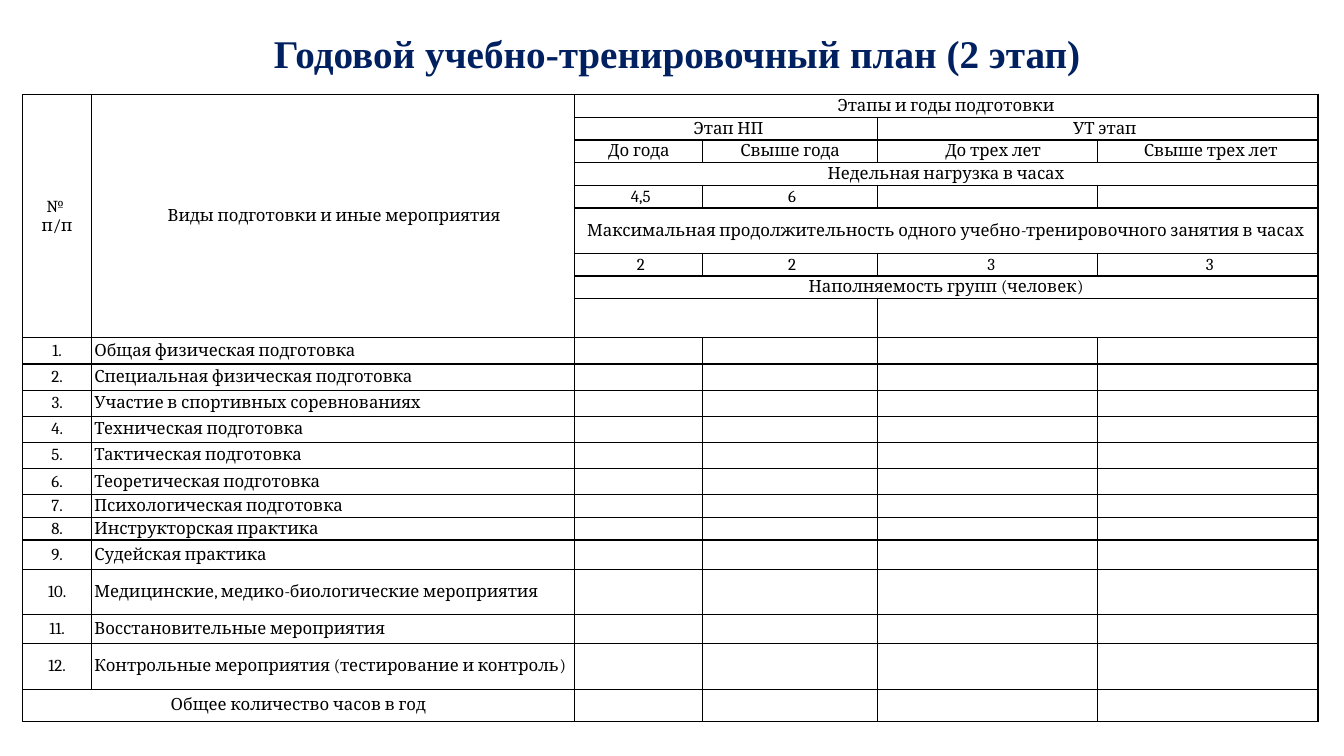
from dataclasses import dataclass

from lxml import etree
from pptx import Presentation
from pptx import util as u
from pptx.dml import color
from pptx.enum import text
from pptx.oxml import ns


@dataclass(frozen=True)
class Theme:
    ink: str = "000000"
    heading: str = "002060"
    body_font: str = "Cambria"
    heading_font: str = "Times New Roman"
    body_size: float = 12
    heading_size: float = 28
    border: float = 1


@dataclass(frozen=True)
class Entry:
    """Text of one table cell, with the cells it spans and its indents in points."""
    row: int
    col: int
    words: str = ""
    rows: int = 1
    cols: int = 1
    margin: float = 0
    indent: float = 0
    centred: bool = True


THEME = Theme()

COLUMN_WIDTHS = [49.2, 344.8, 91.8, 125, 157.2, 157.4]
LINE = 16.2
ROW_HEIGHTS = ([LINE] * 5 + [2 * LINE, LINE, LINE, 28] + [18.7] * 6
               + [LINE, LINE, 21, 2 * LINE, 20.8, 2 * LINE, 23])

HEADER = [
    Entry(0, 0, "№ \nп/п", rows=9),
    Entry(0, 1, "Виды подготовки и иные мероприятия", rows=9, margin=2),
    Entry(0, 2, "Этапы и годы подготовки", cols=4),
    Entry(1, 2, "Этап НП", cols=2, margin=7.2, indent=-3.6),
    Entry(1, 4, "УТ этап", cols=2, margin=10),
    Entry(2, 2, "До года", indent=0.7),
    Entry(2, 3, "Свыше года"),
    Entry(2, 4, "До трех лет", margin=15, indent=-7.2),
    Entry(2, 5, "Свыше трех лет", margin=4.3),
    Entry(3, 2, "Недельная нагрузка в часах", cols=4),
    Entry(4, 2, " 4,5", indent=0.7),
    Entry(4, 3, " 6"),
    Entry(5, 2, "Максимальная продолжительность одного "
                "учебно-тренировочного занятия в часах", cols=4),
    Entry(6, 2, " 2", indent=0.7),
    Entry(6, 3, " 2"),
    Entry(6, 4, "3 ", margin=15, indent=-7.2),
    Entry(6, 5, " 3"),
    Entry(7, 2, "Наполняемость групп (человек)", cols=4),
    Entry(8, 2, cols=2),
    Entry(8, 4, cols=2),
]

ACTIVITIES = [
    "Общая физическая подготовка",
    "Специальная физическая подготовка",
    "Участие в спортивных соревнованиях",
    "Техническая подготовка",
    "Тактическая подготовка",
    "Теоретическая подготовка",
    "Психологическая подготовка",
    "Инструкторская практика",
    "Судейская практика",
    "Медицинские, медико-биологические мероприятия",
    "Восстановительные мероприятия",
    "Контрольные мероприятия (тестирование и контроль)",
]
FIRST_ACTIVITY = 9


def plan_entries() -> list[Entry]:
    entries = list(HEADER)
    for number, activity in enumerate(ACTIVITIES, 1):
        row = FIRST_ACTIVITY + number - 1
        entries.append(Entry(row, 0, f"{number}.", margin=2, indent=-2))
        entries.append(Entry(row, 1, activity, margin=2, centred=False))
    total_row = FIRST_ACTIVITY + len(ACTIVITIES)
    entries.append(Entry(total_row, 0, "Общее количество часов в год",
                         cols=2, margin=2, indent=-2))
    return entries


def set_indent(paragraph, margin: float, indent: float) -> None:
    properties = paragraph._p.get_or_add_pPr()
    properties.set("marL", str(int(u.Pt(margin))))
    properties.set("indent", str(int(u.Pt(indent))))


def add_run(paragraph, words: str, font: str, size: float, ink: str,
            bold: bool = False) -> None:
    run = paragraph.add_run()
    run.text = words
    run.font.name = font
    run.font.size = u.Pt(size)
    run.font.bold = bold
    run.font.color.rgb = color.RGBColor.from_string(ink)


def prepare_cell(cell) -> None:
    cell.margin_left = cell.margin_right = u.Pt(0)
    cell.margin_top = cell.margin_bottom = u.Pt(0)
    cell.vertical_anchor = text.MSO_ANCHOR.MIDDLE
    # Borders on all four sides
    properties = cell._tc.get_or_add_tcPr()
    for side in ("lnL", "lnR", "lnT", "lnB"):
        line = etree.SubElement(properties, ns.qn(f"a:{side}"),
                                w=str(int(u.Pt(THEME.border))))
        fill = etree.SubElement(line, ns.qn("a:solidFill"))
        etree.SubElement(fill, ns.qn("a:srgbClr"), val=THEME.ink)
    cell.fill.background()
    # Type size of the empty line, so that blank rows stay low
    paragraph = cell.text_frame.paragraphs[0]
    etree.SubElement(paragraph._p, ns.qn("a:endParaRPr"),
                     sz=str(int(THEME.body_size * 100)))


def write_entry(table, entry: Entry) -> None:
    cell = table.cell(entry.row, entry.col)
    if entry.rows * entry.cols > 1:
        cell.merge(table.cell(entry.row + entry.rows - 1,
                              entry.col + entry.cols - 1))
    if not entry.words:
        return
    paragraph = cell.text_frame.paragraphs[0]
    align = text.PP_ALIGN
    paragraph.alignment = align.CENTER if entry.centred else align.LEFT
    set_indent(paragraph, entry.margin, entry.indent)
    for position, words in enumerate(entry.words.split("\n")):
        if position:
            paragraph.add_line_break()
        add_run(paragraph, words, THEME.body_font, THEME.body_size, THEME.ink)


def add_plan(slide) -> None:
    table = slide.shapes.add_table(
        len(ROW_HEIGHTS), len(COLUMN_WIDTHS), u.Pt(16.2), u.Pt(67.6),
        u.Pt(sum(COLUMN_WIDTHS)), u.Pt(sum(ROW_HEIGHTS))).table
    table.first_row = table.horz_banding = False
    for column, width in zip(table.columns, COLUMN_WIDTHS):
        column.width = u.Pt(width)
    for row, height in zip(table.rows, ROW_HEIGHTS):
        row.height = u.Pt(height)
    for cell in table.iter_cells():
        prepare_cell(cell)
    for entry in plan_entries():
        write_entry(table, entry)


def add_heading(slide) -> None:
    frame = slide.shapes.add_textbox(
        u.Pt(146.9), u.Pt(15.1), u.Pt(645.1), u.Pt(41.8)).text_frame
    frame.word_wrap = False
    frame.auto_size = text.MSO_AUTO_SIZE.SHAPE_TO_FIT_TEXT
    paragraph = frame.paragraphs[0]
    paragraph.alignment = text.PP_ALIGN.CENTER
    paragraph.line_spacing = 1.07
    set_indent(paragraph, 0, 35.3)
    add_run(paragraph, "Годовой учебно-тренировочный план (2 этап) ",
            THEME.heading_font, THEME.heading_size, THEME.heading, bold=True)


def main() -> None:
    deck = Presentation()
    deck.slide_width, deck.slide_height = u.Pt(960), u.Pt(540)
    slide = deck.slides.add_slide(deck.slide_layouts[6])
    add_plan(slide)
    add_heading(slide)
    deck.save("out.pptx")


if __name__ == "__main__":
    main()
